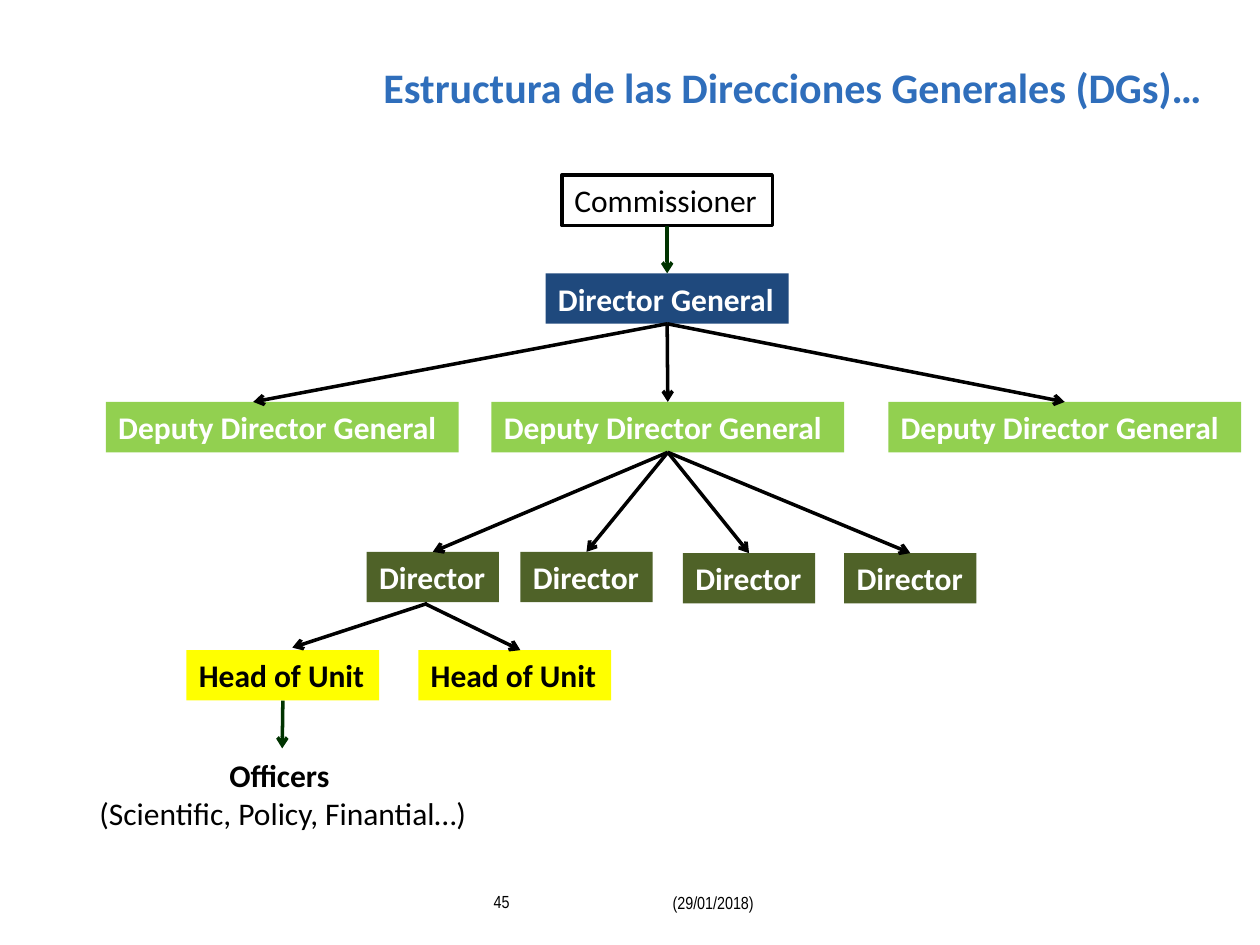
"""Build an organisation chart slide of a Directorate General."""
import pptx
import pptx.dml.color
import pptx.enum.shapes
import pptx.enum.text
import pptx.oxml
import pptx.oxml.ns
import pptx.util

Inches = pptx.util.Inches
Pt = pptx.util.Pt
Align = pptx.enum.text.PP_ALIGN
Anchor = pptx.enum.text.MSO_ANCHOR
BLACK, WHITE, GREEN = "000000", "FFFFFF", "003300"
TALL = 0.4


def paint(code):
    return pptx.dml.color.RGBColor.from_string(code)


class Chart:
    def __init__(self, deck):
        self.font = "Calibri"
        self.size = 18
        self.line = 2
        self.slide = deck.slides.add_slide(deck.slide_layouts[5])

    def put(self, para, text, color=BLACK, bold=False, size=None, font=None):
        run = para.add_run()
        run.text = text
        run.font.name = font or self.font
        run.font.size = Pt(size or self.size)
        run.font.bold = bold
        run.font.color.rgb = paint(color)

    def title(self, text, left, top, width, height):
        shape = self.slide.shapes.title
        shape.left, shape.top = Inches(left), Inches(top)
        shape.width, shape.height = Inches(width), Inches(height)
        frame = shape.text_frame
        frame.auto_size = pptx.enum.text.MSO_AUTO_SIZE.NONE
        frame.vertical_anchor = Anchor.TOP
        para = frame.paragraphs[0]
        para.alignment = Align.RIGHT
        self.put(para, text, "2F6EBB", True, 24)

    def box(self, text, left, top, width, fill=None, color=WHITE):
        shape = self.slide.shapes.add_shape(
            pptx.enum.shapes.MSO_SHAPE.RECTANGLE,
            Inches(left), Inches(top), Inches(width), Inches(TALL))
        shape.shadow.inherit = False
        if fill:
            shape.fill.solid()
            shape.fill.fore_color.rgb = paint(fill)
            shape.line.fill.background()
        else:
            shape.fill.background()
            shape.line.color.rgb = paint(BLACK)
            shape.line.width = Pt(self.line)
        frame = shape.text_frame
        frame.word_wrap = True
        frame.margin_right = 0
        frame.vertical_anchor = Anchor.MIDDLE
        para = frame.paragraphs[0]
        para.alignment = Align.LEFT
        self.put(para, text, color, bool(fill))
        return shape

    def label(self, rows, left, top, width, height, align=Align.LEFT, **style):
        shape = self.slide.shapes.add_textbox(
            Inches(left), Inches(top), Inches(width), Inches(height))
        frame = shape.text_frame
        frame.word_wrap = True
        for i, (text, bold) in enumerate(rows):
            para = frame.add_paragraph() if i else frame.paragraphs[0]
            para.alignment = align
            self.put(para, text, bold=bold, **style)

    def arrow(self, start, end, color=BLACK):
        link = self.slide.shapes.add_connector(
            pptx.enum.shapes.MSO_CONNECTOR.STRAIGHT, 0, 0, 0, 0)
        if isinstance(start, tuple):
            link.begin_x, link.begin_y = map(Inches, start)
        else:
            link.begin_connect(start, 2)
        if isinstance(end, tuple):
            link.end_x, link.end_y = map(Inches, end)
        else:
            link.end_connect(end, 0)
        link.line.color.rgb = paint(color)
        link.line.width = Pt(self.line)
        space = pptx.oxml.ns.nsdecls("a")
        props = link.element.spPr
        props.find(pptx.oxml.ns.qn("a:ln")).append(
            pptx.oxml.parse_xml(f'<a:tailEnd {space} type="arrow"/>'))
        props.append(pptx.oxml.parse_xml(f"<a:effectLst {space}/>"))


def main():
    deck = pptx.Presentation()
    deck.slide_width, deck.slide_height = Inches(10), Inches(7.5)
    chart = Chart(deck)
    chart.title("Estructura de las Direcciones Generales (DGs)…",
                2.24, 0.44, 7.4, 0.63)

    boss = chart.box("Commissioner", 4.46, 1.39, 1.67, color=BLACK)
    chief = chart.box("Director General", 4.33, 2.17, 1.93, "1F497D")
    vices = [chart.box("Deputy Director General", x, 3.19, 2.8, "92D050")
             for x in (0.84, 3.9, 7.05)]
    heads = [chart.box("Director", x, y, 1.05, "4F6228")
             for x, y in ((2.91, 4.38), (4.13, 4.38), (5.42, 4.39), (6.7, 4.39))]
    units = [chart.box("Head of Unit", x, 5.16, 1.53, "FFFF00", BLACK)
             for x in (1.48, 3.32)]
    chart.label(
        [("Officers ", True), ("(Scientific, Policy, Finantial…)", False)],
        0.67, 5.95, 3.15, 0.71, Align.CENTER)

    chart.arrow(boss, chief, GREEN)
    for end in ((2.01, 3.19), *vices[1:]):
        chart.arrow(chief, end)
    for head in heads:
        chart.arrow(vices[1], head)
    chart.arrow((3.39, 4.79), (2.32, 5.14))
    chart.arrow((3.37, 4.79), (4.13, 5.16))
    chart.arrow(units[0], (2.24, 5.94), GREEN)

    for text, left, top, width in (("45", 3.82, 7.02, 0.4),
                                   ("(29/01/2018)", 5.24, 7.03, 0.9)):
        chart.label([(text, False)], left, top, width, 0.27,
                    size=10, font="Arial Narrow")
    deck.save("out.pptx")


if __name__ == "__main__":
    main()
